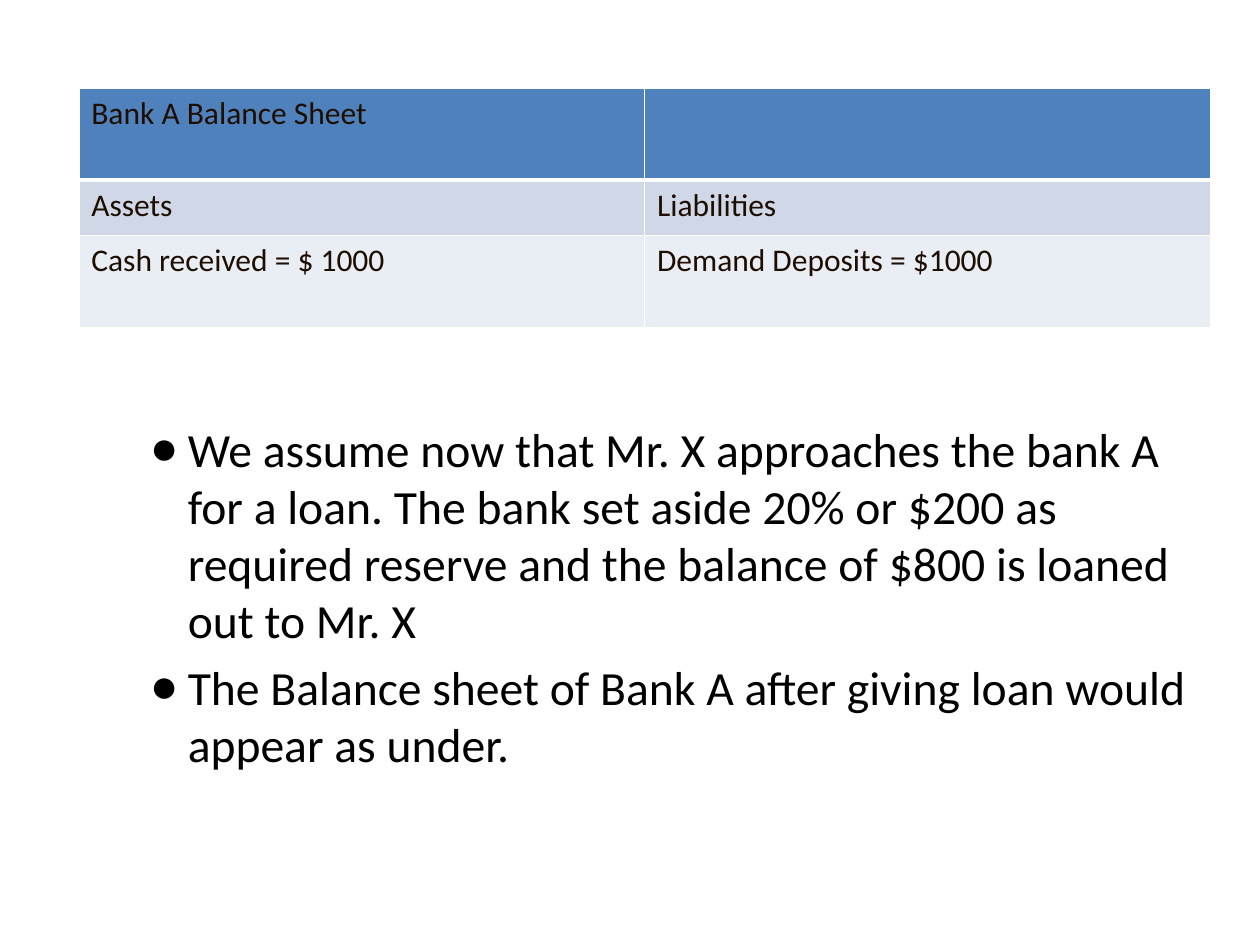
import pptx
import pptx.util
import pptx.dml.color
import pptx.enum.text
import lxml.etree
from pptx.oxml.ns import qn

Pt = pptx.util.Pt
RGB = pptx.dml.color.RGBColor.from_string
tone = {"head": "4F81BD", "band": "D0D8E8", "pale": "E9EDF4",
        "edge": "FFFFFF", "cell": "1E0E01", "text": "000000"}


def style(par, size, color):
    par.font.name = "Calibri"
    par.font.size = Pt(size)
    par.font.bold = False
    par.font.color.rgb = RGB(color)


def border(cell, side, width):
    line = lxml.etree.SubElement(cell._tc.get_or_add_tcPr(), qn("a:ln" + side), w=str(Pt(width)))
    fill = lxml.etree.SubElement(line, qn("a:solidFill"))
    lxml.etree.SubElement(fill, qn("a:srgbClr"), val=tone["edge"])


deck = pptx.Presentation()
deck.slide_width, deck.slide_height = Pt(720), Pt(540)
slide = deck.slides.add_slide(deck.slide_layouts[1])
title = slide.shapes.title
title._element.getparent().remove(title._element)

# Balance sheet
rows = [
    ("head", 52.5, ["Bank A Balance Sheet", ""]),
    ("band", 31.7, ["Assets", "Liabilities"]),
    ("pale", 52.5, ["Cash received = $ 1000", "Demand Deposits = $1000"]),
]
sheet = slide.shapes.add_table(3, 2, Pt(45), Pt(50.4), Pt(646.6), Pt(136.7)).table
for col in sheet.columns:
    col.width = Pt(323.3)
for r, (kind, height, words) in enumerate(rows):
    sheet.rows[r].height = Pt(height)
    for c, word in enumerate(words):
        cell = sheet.cell(r, c)
        cell.text = word
        style(cell.text_frame.paragraphs[0], 18, tone["cell"])
        for side in "LRTB":
            border(cell, side, 3 if kind == "head" and side == "B" else 1)
        cell.fill.solid()
        cell.fill.fore_color.rgb = RGB(tone[kind])

# Loan notes
notes = [
    "We assume now that Mr. X approaches the bank A for a loan. The bank set aside "
    "20% or $200 as required reserve and the balance of $800 is loaned out to Mr. X",
    "The Balance sheet of Bank A after giving loan would appear as under.",
]
body = slide.placeholders[1]
body.left, body.top, body.width, body.height = Pt(78.5), Pt(236.2), Pt(612), Pt(146.2)
frame = body.text_frame
frame.auto_size = pptx.enum.text.MSO_AUTO_SIZE.NONE
frame.text = "\n".join(notes)
for par in frame.paragraphs:
    style(par, 27.2, tone["text"])
    par.space_before = Pt(5.4)
    props = par._p.get_or_add_pPr()
    props.set("marL", str(Pt(21.6)))
    props.set("indent", str(Pt(-21.6)))
    bullet = lxml.etree.Element(qn("a:buChar"), char="●")
    props.find(qn("a:defRPr")).addprevious(bullet)

deck.save("out.pptx")
